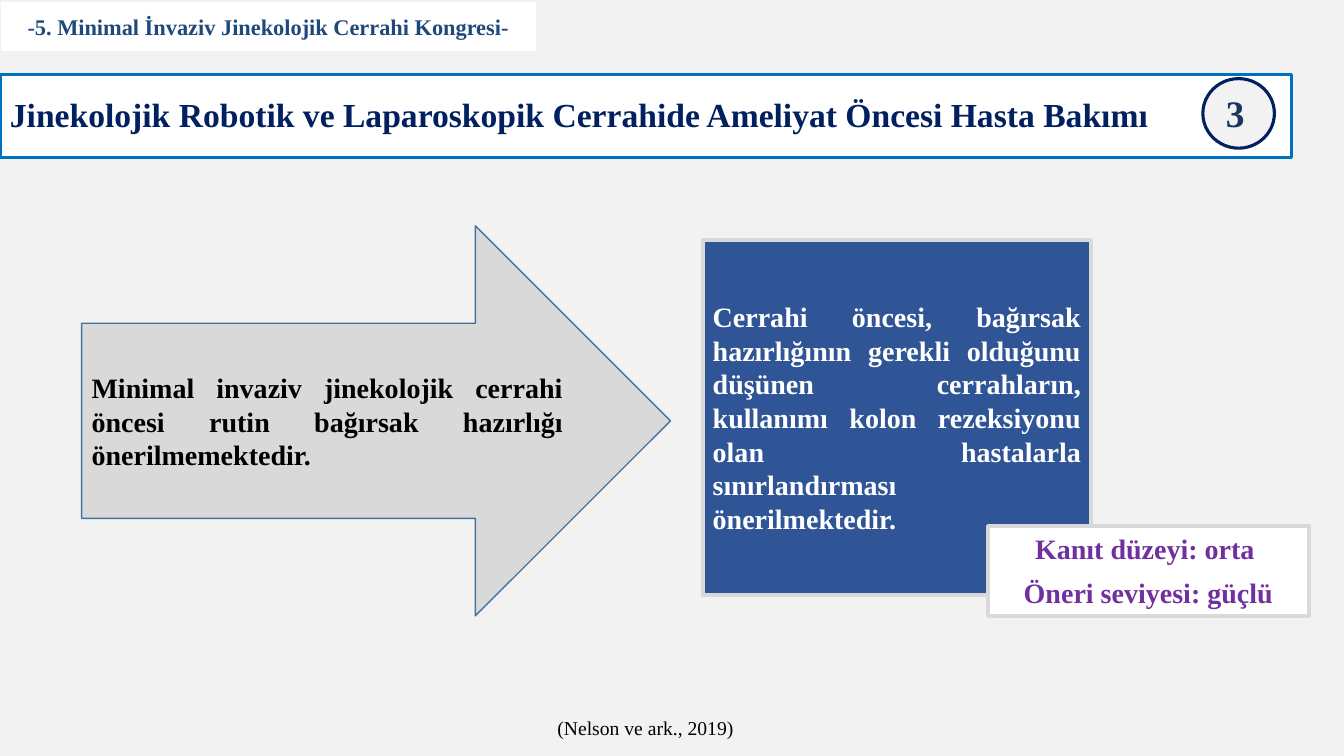
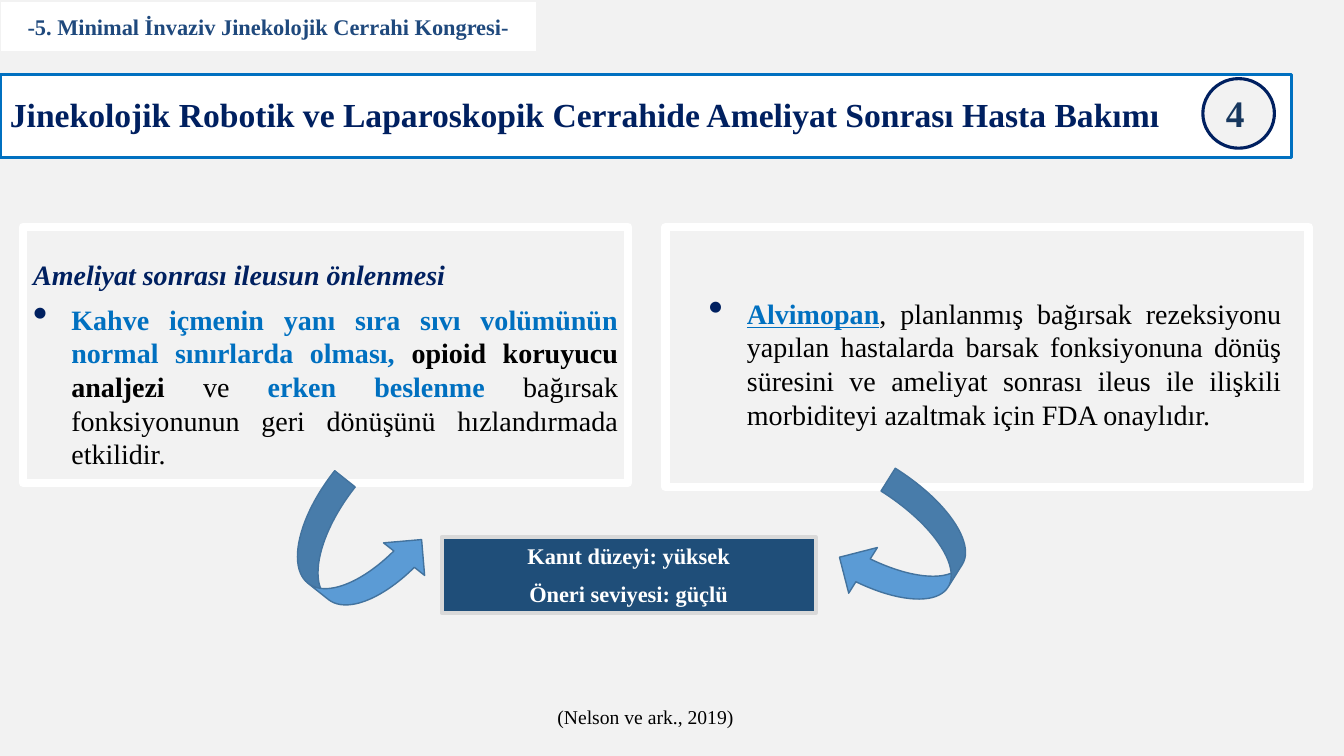
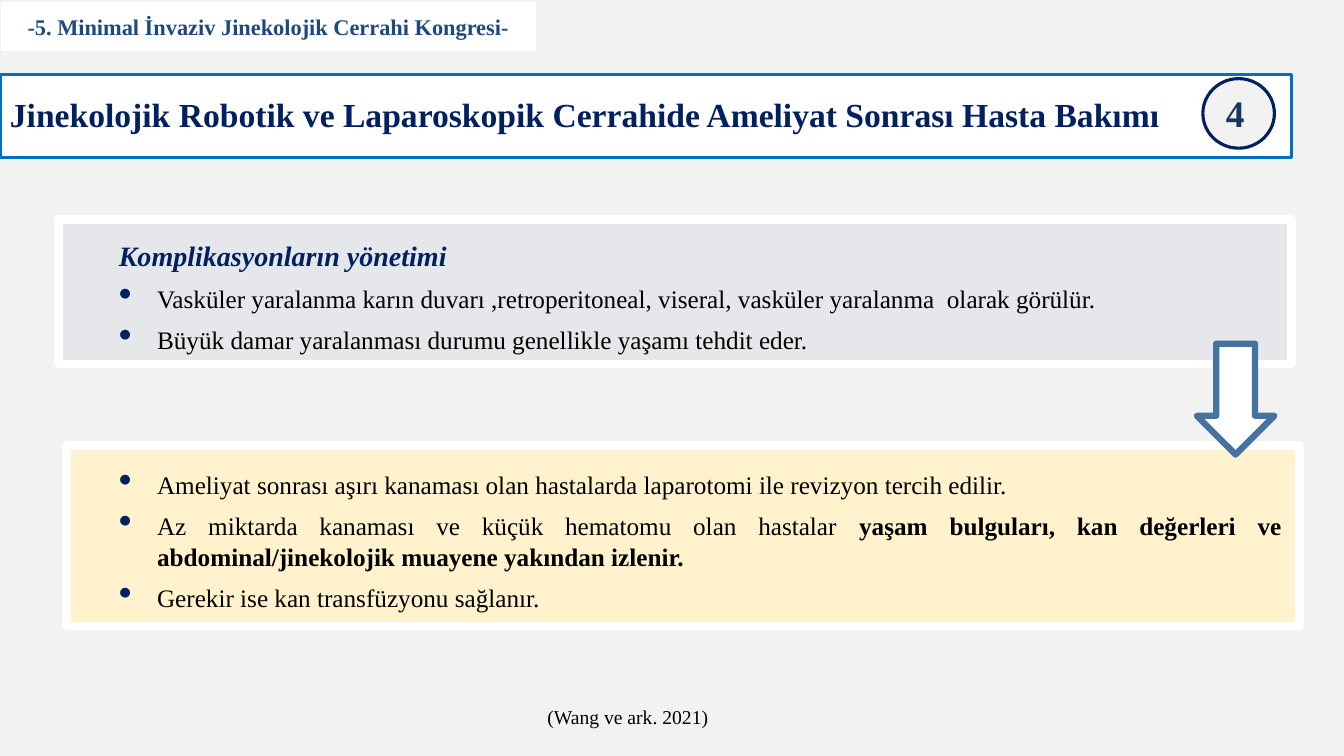
"""Build three slides on patient care around robotic and laparoscopic gynaecological surgery."""
from dataclasses import dataclass
from typing import NamedTuple, Optional

from lxml.etree import SubElement
from pptx import Presentation
from pptx.dml.color import RGBColor
from pptx.enum.shapes import MSO_SHAPE as SHAPE
from pptx.enum.text import MSO_ANCHOR as ANCHOR, MSO_AUTO_SIZE as FIT, PP_ALIGN as ALIGN
from pptx.oxml.ns import qn
from pptx.util import Inches, Pt

FONT = "Times New Roman"
PAPER, WHITE, BLACK = "F2F2F2", "FFFFFF", "000000"
NAVY, BLUE, STEEL, SILVER = "002060", "0070C0", "43739E", "D9D9D9"
CONGRESS = "-5. Minimal İnvaziv Jinekolojik Cerrahi Kongresi-"
BEFORE = "Jinekolojik Robotik ve Laparoskopik Cerrahide Ameliyat Öncesi Hasta Bakımı"
AFTER = "Jinekolojik Robotik ve Laparoskopik Cerrahide Ameliyat Sonrası Hasta Bakımı"
HANGING = 0.38


class Box(NamedTuple):
    left: float
    top: float
    width: float
    height: float


@dataclass(frozen=True)
class Words:
    text: str
    size: float = 20
    color: str = BLACK
    bold: bool = False
    italic: bool = False
    underline: bool = False


@dataclass(frozen=True)
class Para:
    words: tuple[Words, ...]
    align: ALIGN = ALIGN.JUSTIFY
    after: float = 0
    margin: float = 0
    bullet: bool = False
    spacing: Optional[float] = None


@dataclass(frozen=True)
class Panel:
    frame: Box
    body: Box
    paras: tuple[Para, ...]
    fill: Optional[str] = None


@dataclass(frozen=True)
class Evidence:
    box: Box
    level: str
    fill: str
    color: str
    size: float


def rgb(code: str) -> RGBColor:
    return RGBColor.from_string(code)


def bullet_point(*words: Words, margin: float = 0.88) -> Para:
    return Para(words, after=8, margin=margin, bullet=True)


def heading(text: str, margin: float = 0) -> Para:
    return Para((Words(text, color=NAVY, bold=True, italic=True),), after=8, margin=margin)


def add_bullet(properties) -> None:
    properties.set("indent", str(-Inches(HANGING)))
    tint = SubElement(properties, qn("a:buClr"))
    SubElement(tint, qn("a:srgbClr")).set("val", NAVY)
    SubElement(properties, qn("a:buSzPct")).set("val", "150000")
    SubElement(properties, qn("a:buChar")).set("char", "•")


def write(frame, paras: tuple[Para, ...], anchor: ANCHOR = ANCHOR.MIDDLE,
          wrap: bool = True, inset: float = 0.05) -> None:
    frame.word_wrap = wrap
    frame.vertical_anchor = anchor
    frame.margin_top = frame.margin_bottom = Inches(inset)
    for index, para in enumerate(paras):
        line = frame.paragraphs[0] if index == 0 else frame.add_paragraph()
        line.alignment = para.align
        line.space_after = Pt(para.after)
        if para.spacing:
            line.line_spacing = para.spacing
        properties = line._p.get_or_add_pPr()
        properties.set("marL", str(Inches(para.margin)))
        if para.bullet:
            add_bullet(properties)
        for words in para.words:
            run = line.add_run()
            run.text = words.text
            font = run.font
            font.name, font.size = FONT, Pt(words.size)
            font.bold, font.italic, font.underline = words.bold, words.italic, words.underline
            font.color.rgb = rgb(words.color)


def draw(slide, kind: SHAPE, box: Box, fill: Optional[str], line: str,
         weight: float = 1, rotation: float = 0):
    shape = slide.shapes.add_shape(kind, *map(Inches, box))
    shape.shadow.inherit = False
    shape.rotation = rotation
    if fill:
        shape.fill.solid()
        shape.fill.fore_color.rgb = rgb(fill)
    else:
        shape.fill.background()
    shape.line.color.rgb = rgb(line)
    shape.line.width = Pt(weight)
    return shape


def label(slide, box: Box, *paras: Para, **layout):
    frame = slide.shapes.add_textbox(*map(Inches, box)).text_frame
    write(frame, paras, **layout)
    return frame


def start_slide(deck, title: str, number: str):
    slide = deck.slides.add_slide(deck.slide_layouts[6])
    slide.background.fill.solid()
    slide.background.fill.fore_color.rgb = rgb(PAPER)
    congress = draw(slide, SHAPE.RECTANGLE, Box(0, 0.01, 5.32, 0.5), WHITE, PAPER)
    write(congress.text_frame, (Para((Words(CONGRESS, 16, "1F497D", True),), ALIGN.CENTER),))
    draw(slide, SHAPE.RECTANGLE, Box(0, 0.74, 12.81, 0.82), WHITE, BLUE, 2.25)
    label(slide, Box(0, 0.88, 13.56, 0.51), Para((Words(title, 24, NAVY, True),), ALIGN.LEFT))
    draw(slide, SHAPE.OVAL, Box(11.93, 0.78, 0.71, 0.69), PAPER, NAVY, 2.25)
    label(slide, Box(12.06, 0.84, 0.58, 0.55),
          Para((Words(number, 26.7, "17375E", True),), ALIGN.LEFT), anchor=ANCHOR.TOP)
    return slide


def add_citation(slide, text: str, box: Box, spacing: Optional[float] = None) -> None:
    frame = label(slide, box, Para((Words(text, 14),), after=8, spacing=spacing),
                  anchor=ANCHOR.TOP, wrap=False)
    frame.auto_size = FIT.SHAPE_TO_FIT_TEXT


def add_panel(slide, panel: Panel) -> None:
    draw(slide, SHAPE.RECTANGLE, panel.frame, panel.fill, WHITE, 6)
    label(slide, panel.body, *panel.paras, inset=0.1)


def add_evidence(slide, evidence: Evidence) -> None:
    card = draw(slide, SHAPE.RECTANGLE, evidence.box, evidence.fill, SILVER, 3)
    lines = (f"Kanıt düzeyi: {evidence.level}", "Öneri seviyesi: güçlü")
    write(card.text_frame, tuple(
        Para((Words(text, evidence.size, evidence.color, True),), ALIGN.CENTER, after=8)
        for text in lines), anchor=ANCHOR.TOP)
    card.text_frame.auto_size = FIT.SHAPE_TO_FIT_TEXT


def build_bowel_preparation(deck) -> None:
    slide = start_slide(deck, BEFORE, "3")
    add_citation(slide, "(Nelson ve ark., 2019)", Box(5.43, 6.94, 1.96, 0.41), 1.5)
    advice = draw(slide, SHAPE.RIGHT_ARROW, Box(0.81, 2.24, 5.84, 3.87), SILVER, STEEL)
    write(advice.text_frame, (Para((Words(
        "Minimal invaziv jinekolojik cerrahi öncesi rutin bağırsak hazırlığı "
        "önerilmemektedir.", bold=True),)),))
    limit = draw(slide, SHAPE.RECTANGLE, Box(6.97, 2.38, 3.85, 3.52), "2F5597", SILVER, 3)
    write(limit.text_frame, (Para((Words(
        "Cerrahi öncesi, bağırsak hazırlığının gerekli olduğunu düşünen cerrahların, "
        "kullanımı kolon rezeksiyonu olan hastalarla sınırlandırması önerilmektedir.",
        color=WHITE, bold=True),)),))
    add_evidence(slide, Evidence(Box(9.8, 5.22, 3.18, 0.89), "orta ", WHITE, "7030A0", 20))


def build_ileus(deck) -> None:
    slide = start_slide(deck, AFTER, "4")
    add_citation(slide, "(Nelson ve ark., 2019)", Box(5.43, 6.94, 1.96, 0.34))
    prevention = (
        heading("Ameliyat sonrası ileusun önlenmesi"),
        bullet_point(
            Words("Kahve içmenin yanı sıra sıvı volümünün normal sınırlarda olması, ",
                  color=BLUE, bold=True),
            Words("opioid koruyucu analjezi", bold=True),
            Words(" ve "),
            Words("erken beslenme ", color=BLUE, bold=True),
            Words("bağırsak fonksiyonunun geri dönüşünü hızlandırmada etkilidir."),
            margin=HANGING),
    )
    medication = (
        bullet_point(
            Words("Alvimopan", color=BLUE, bold=True, underline=True),
            Words(", planlanmış bağırsak rezeksiyonu yapılan hastalarda barsak fonksiyonuna "
                  "dönüş süresini ve ameliyat sonrası ileus ile ilişkili morbiditeyi azaltmak "
                  "için FDA onaylıdır.")),
    )
    add_panel(slide, Panel(Box(0.23, 2.25, 6, 2.54), Box(0.23, 2.38, 6, 2.46), prevention))
    add_panel(slide, Panel(Box(6.6, 2.25, 6.38, 2.58), Box(6.43, 2.66, 6.38, 1.89), medication))
    add_evidence(slide, Evidence(Box(4.38, 5.33, 3.71, 0.75), "yüksek", "1F4E79", WHITE, 16))
    for kind, box, rotation in (
        (SHAPE.CURVED_RIGHT_ARROW, Box(3.01, 4.82, 1.04, 1.36), 308.4),
        (SHAPE.CURVED_LEFT_ARROW, Box(8.45, 4.83, 1.07, 1.31), 32.1),
    ):
        draw(slide, kind, box, "5B9BD5", STEEL, rotation=rotation)


def build_complications(deck) -> None:
    slide = start_slide(deck, AFTER, "4")
    add_citation(slide, "(Wang ve ark. 2021)", Box(5.33, 6.94, 1.81, 0.34))
    injuries = (
        heading("Komplikasyonların yönetimi", margin=0.5),
        bullet_point(Words("Vasküler yaralanma karın duvarı ,retroperitoneal, viseral, "
                           "vasküler yaralanma  olarak görülür.", 18)),
        bullet_point(Words("Büyük damar yaralanması durumu genellikle yaşamı tehdit eder.", 18)),
    )
    bleeding = (
        bullet_point(Words("Ameliyat sonrası aşırı kanaması olan hastalarda laparotomi ile "
                           "revizyon tercih edilir.", 18)),
        bullet_point(
            Words("Az miktarda kanaması ve küçük hematomu olan hastalar ", 18),
            Words("yaşam bulguları, kan değerleri ve abdominal/jinekolojik muayene "
                  "yakından izlenir.", 18, bold=True)),
        bullet_point(Words("Gerekir ise kan transfüzyonu sağlanır.", 18)),
    )
    add_panel(slide, Panel(Box(0.66, 4.42, 12.23, 1.79), Box(0.58, 4.52, 12.23, 1.69),
                           bleeding, "FFF2CC"))
    add_panel(slide, Panel(Box(0.58, 2.18, 12.23, 1.43), Box(0.58, 2.27, 12.23, 1.34),
                           injuries, "E5E7EA"))
    draw(slide, SHAPE.DOWN_ARROW, Box(11.87, 3.41, 0.77, 1.1), WHITE, STEEL, 4.5)


def main() -> None:
    deck = Presentation()
    deck.slide_width, deck.slide_height = Inches(13.33), Inches(7.5)
    build_bowel_preparation(deck)
    build_ileus(deck)
    build_complications(deck)
    deck.save("out.pptx")


if __name__ == "__main__":
    main()
